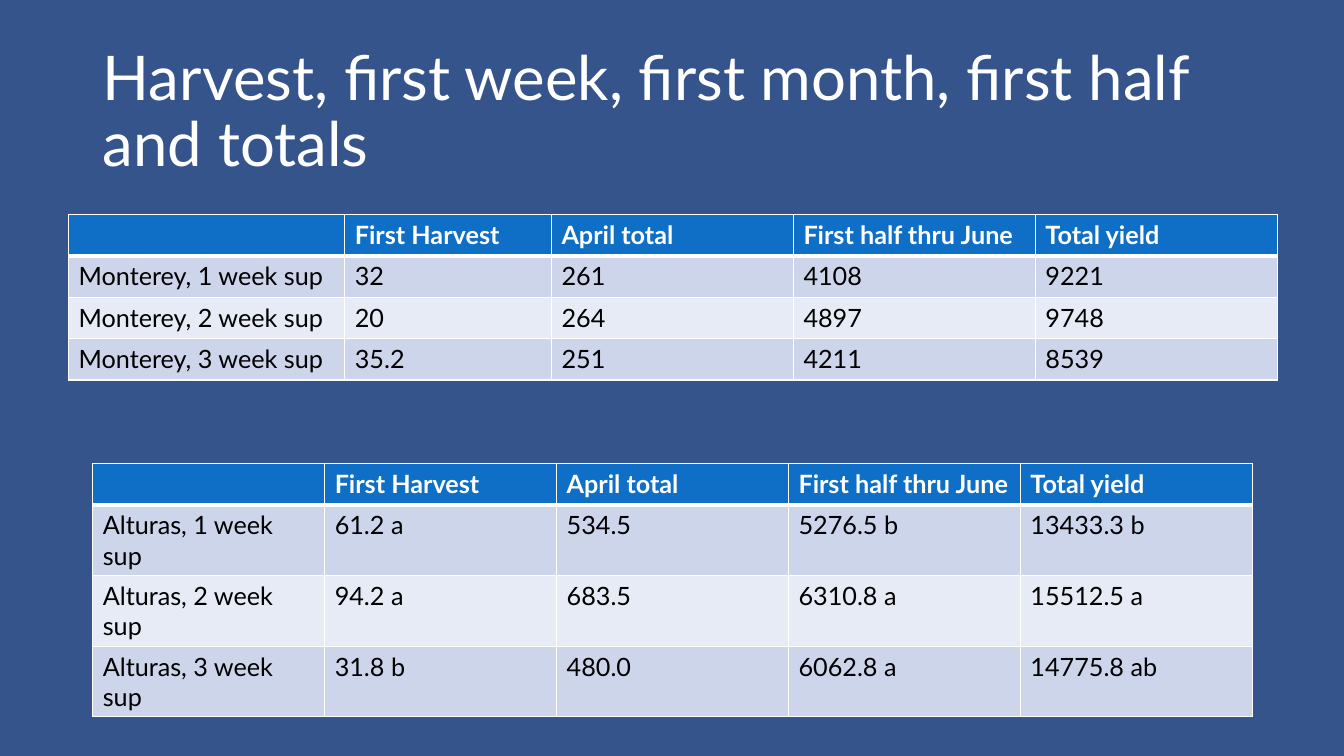
from lxml import etree
from pptx import Presentation
from pptx.dml.color import RGBColor
from pptx.enum.text import MSO_ANCHOR
from pptx.oxml.ns import qn
from pptx.util import Inches, Pt

MIDDLE = MSO_ANCHOR.MIDDLE
FONT = "Lato"
NAVY = RGBColor(0x36, 0x54, 0x8C)
BLUE = RGBColor(0x0F, 0x6F, 0xC6)
BAND_DARK = RGBColor(0xCC, 0xD5, 0xEA)
BAND_LIGHT = RGBColor(0xE7, 0xEB, 0xF5)
WHITE = RGBColor(0xFF, 0xFF, 0xFF)
BLACK = RGBColor(0, 0, 0)

TITLE = "Harvest, first week, first month, first half and totals"
HEADER = ("", "First Harvest", "April total", "First half thru June", "Total yield")
ROW_HEIGHT = 0.41
TABLES = [
    {
        "left": 0.92, "top": 4.6, "widths": [2.3] * 5,
        "rows": [
            ("Alturas, 1 week sup", "61.2 a", "534.5", "5276.5 b", "13433.3 b"),
            ("Alturas, 2 week sup", "94.2 a", "683.5", "6310.8 a", "15512.5 a"),
            ("Alturas, 3 week sup", "31.8 b", "480.0", "6062.8 a", "14775.8 ab"),
        ],
    },
    {
        "left": 0.68, "top": 2.13, "widths": [2.74, 2.05, 2.4, 2.4, 2.4],
        "rows": [
            ("Monterey, 1 week sup", "32", "261", "4108", "9221"),
            ("Monterey, 2 week sup", "20", "264", "4897", "9748"),
            ("Monterey, 3 week sup", "35.2", "251", "4211", "8539"),
        ],
    },
]


def write(tf, text, size=18, color=BLACK, bold=False, line_spacing=None):
    p = tf.paragraphs[0]
    p.line_spacing = line_spacing
    p.font.size = Pt(size)
    if text:
        r = p.add_run()
        r.text = text
        r.font.name = FONT
        r.font.size = Pt(size)
        r.font.bold = bold
        r.font.color.rgb = color


def set_borders(cell, top=1, bottom=1):
    """Draw white cell borders; call before filling, as the XML order requires."""
    tcPr = cell._tc.get_or_add_tcPr()
    for side, width in (("L", 1), ("R", 1), ("T", top), ("B", bottom)):
        ln = etree.SubElement(tcPr, qn(f"a:ln{side}"), w=str(Pt(width)))
        fill = etree.SubElement(ln, qn("a:solidFill"))
        etree.SubElement(fill, qn("a:srgbClr"), val=str(WHITE))


def add_yield_table(s, left, top, widths, rows):
    grid = [HEADER, *rows]
    table = s.shapes.add_table(
        len(grid), len(HEADER), Inches(left), Inches(top),
        Inches(sum(widths)), Inches(ROW_HEIGHT * len(grid))).table
    for column, width in zip(table.columns, widths):
        column.width = Inches(width)
    for i, values in enumerate(grid):
        table.rows[i].height = Inches(ROW_HEIGHT)
        is_header = i == 0
        band = BLUE if is_header else BAND_DARK if i % 2 else BAND_LIGHT
        for j, value in enumerate(values):
            cell = table.cell(i, j)
            set_borders(cell, top=3 if i == 1 else 1, bottom=3 if is_header else 1)
            cell.fill.solid()
            cell.fill.fore_color.rgb = band
            write(cell.text_frame, value, bold=is_header,
                  color=WHITE if is_header else BLACK)


prs = Presentation()
prs.slide_width, prs.slide_height = Inches(13.33), Inches(7.5)
s = prs.slides.add_slide(prs.slide_layouts[5])
s.background.fill.solid()
s.background.fill.fore_color.rgb = NAVY

title = s.shapes.title
title.left, title.top = Inches(0.92), Inches(0.4)
title.width, title.height = Inches(11.5), Inches(1.45)
tf = title.text_frame
tf.word_wrap = True
tf.vertical_anchor = MIDDLE
write(tf, TITLE, size=44, color=WHITE, line_spacing=0.9)
tf.paragraphs[0].alignment = 1

for table in TABLES:
    add_yield_table(s, **table)

prs.save("out.pptx")
